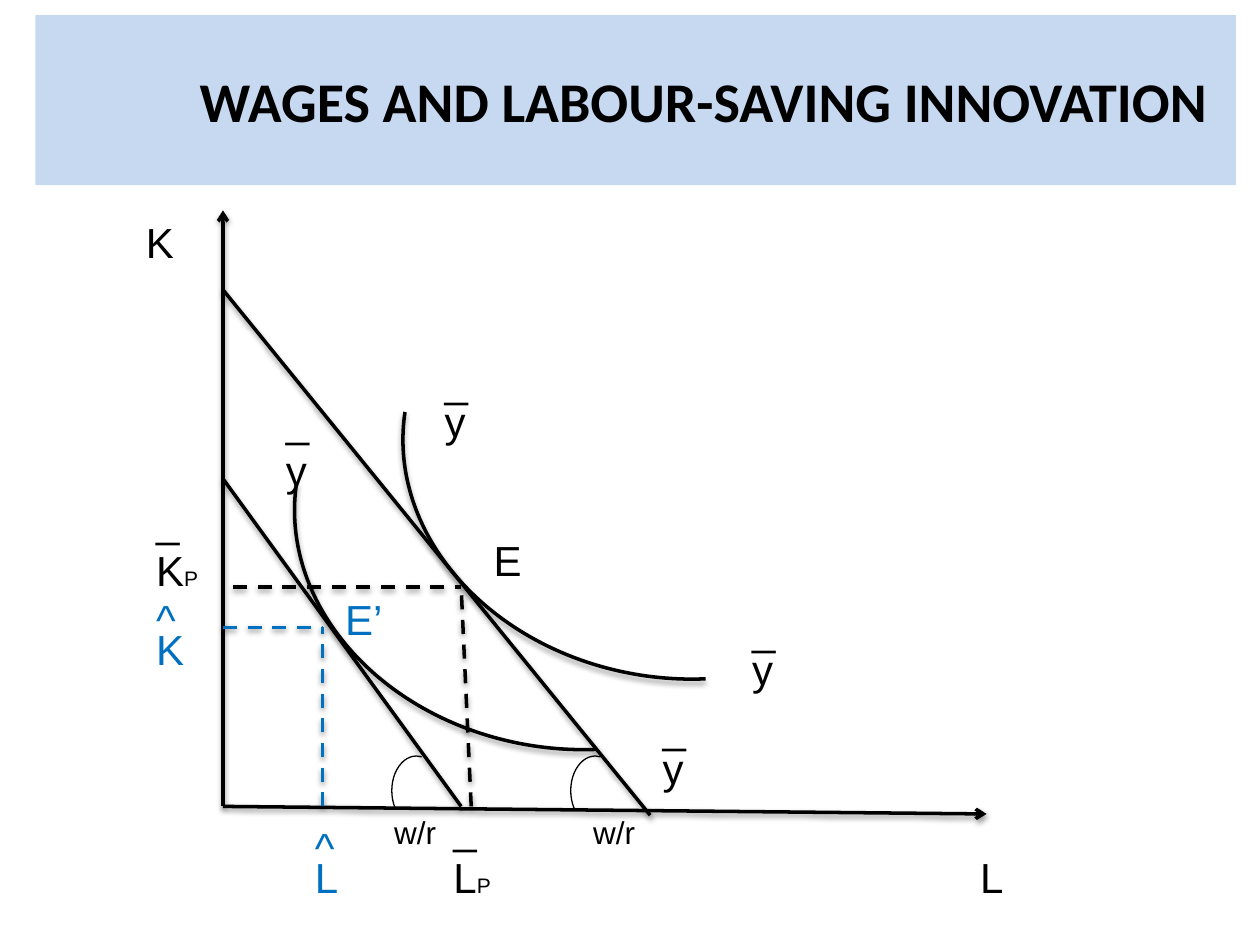
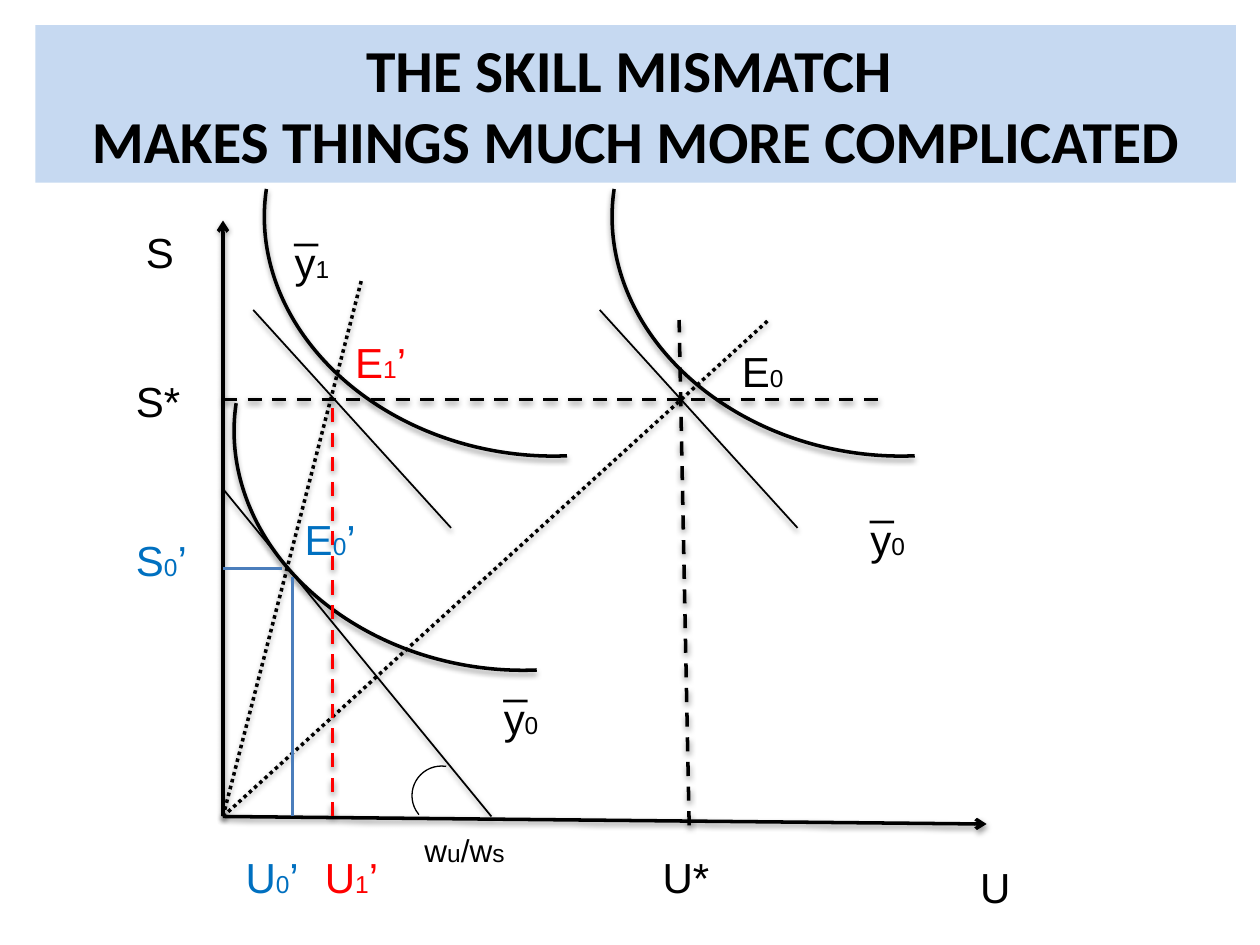
from lxml.etree import SubElement
from pptx import Presentation
from pptx.dml.color import RGBColor
from pptx.enum.dml import MSO_LINE
from pptx.enum.shapes import MSO_CONNECTOR, MSO_SHAPE
from pptx.enum.text import MSO_ANCHOR, MSO_AUTO_SIZE, PP_ALIGN
from pptx.oxml.ns import qn
from pptx.util import Inches, Pt

BLACK = RGBColor(0x00, 0x00, 0x00)
BLUE = RGBColor(0x00, 0x70, 0xC0)
STEEL = RGBColor(0x4B, 0x7E, 0xBC)
RED = RGBColor(0xFF, 0x00, 0x00)
BAND = RGBColor(0xC6, 0xD9, 0xF1)

DASH, DOT = MSO_LINE.DASH, MSO_LINE.ROUND_DOT
AXIS_X, AXIS_END = 1.77, 7.83
BAR, HAT = "_", "^"


def write_run(paragraph, text, size=24, color=BLACK, font="Arial", bold=False):
    run = paragraph.add_run()
    run.text = text
    run.font.size = Pt(size)
    run.font.name = font
    run.font.bold = bold
    run.font.color.rgb = color


def set_effects(shape, shadow):
    """Give the shape a soft drop shadow, or none at all."""
    effects = SubElement(shape._element.spPr, qn("a:effectLst"))
    if shadow:
        outer = SubElement(effects, qn("a:outerShdw"), blurRad="40000",
                           dist="20000", dir="5400000", rotWithShape="0")
        black = SubElement(outer, qn("a:srgbClr"), val=str(BLACK))
        SubElement(black, qn("a:alpha"), val="38000")


class Diagram:
    """Style and current slide of the production diagrams."""

    def __init__(self, deck):
        self.deck = deck
        self.slide = None

    def new_slide(self, lines, top, height, size, indent=0.1):
        self.slide = self.deck.slides.add_slide(self.deck.slide_layouts[5])
        title = self.slide.shapes.title
        title.left, title.top = Inches(0.28), Inches(top)
        title.width, title.height = Inches(9.53), Inches(height)
        title.fill.solid()
        title.fill.fore_color.rgb = BAND
        frame = title.text_frame
        frame.auto_size = MSO_AUTO_SIZE.NONE
        frame.vertical_anchor = MSO_ANCHOR.MIDDLE
        frame.margin_left = Inches(indent)
        paragraph = frame.paragraphs[0]
        paragraph.alignment = PP_ALIGN.CENTER
        for number, line in enumerate(lines):
            if number:
                paragraph.add_line_break()
            write_run(paragraph, line, size=size, font="Calibri", bold=True)

    def label(self, text, left, top, width=0.55, small=14, size=24, color=BLACK):
        """Write a label; every second part between | signs is small."""
        height = 0.5 if size == 24 else 0.4
        box = self.slide.shapes.add_textbox(
            Inches(left), Inches(top), Inches(width), Inches(height))
        frame = box.text_frame
        frame.word_wrap = True
        frame.auto_size = MSO_AUTO_SIZE.SHAPE_TO_FIT_TEXT
        for number, part in enumerate(text.split("|")):
            write_run(frame.paragraphs[0], part, color=color,
                      size=small if number % 2 else size)

    def marked(self, text, left, top, mark=BAR, gap=0.32, **style):
        """Write a label with a bar or a hat above it."""
        self.label(text, left, top, **style)
        self.label(mark, left, top - gap, color=style.get("color", BLACK))

    def line(self, start, end, weight=2, color=BLACK, dash=None,
             arrow=False, shadow=True):
        line = self.slide.shapes.add_connector(
            MSO_CONNECTOR.STRAIGHT, *map(Inches, start + end))
        line.line.width = Pt(weight)
        line.line.color.rgb = color
        if dash:
            line.line.dash_style = dash
        if arrow:
            SubElement(line.line._get_or_add_ln(), qn("a:tailEnd"), type="arrow")
        set_effects(line, shadow)

    def arc(self, left, top, width, height, angles, weight, rotation=0,
            shadow=False):
        arc = self.slide.shapes.add_shape(
            MSO_SHAPE.ARC, *map(Inches, (left, top, width, height)))
        arc.adjustments[0], arc.adjustments[1] = angles
        arc.rotation = rotation
        arc.fill.background()
        arc.line.color.rgb = BLACK
        arc.line.width = Pt(weight)
        set_effects(arc, shadow)

    def isoquant(self, left, top):
        self.arc(left, top, 4.35, 3.57, (152.42, 0.06), 2,
                 rotation=188.5, shadow=True)

    def angle(self, left, top, width, height):
        self.arc(left, top, width, height, (83.97, 167.39), 0.75)

    def axes(self, base, vertical, horizontal):
        top = base - 4.73
        self.line((AXIS_X, base), (AXIS_X, top), arrow=True)
        self.line((AXIS_X, base), (AXIS_END, base + 0.06), arrow=True)
        self.label(vertical, 1.06, top)
        self.label(horizontal, 7.68, base + 0.31)


def labour_saving(diagram):
    diagram.new_slide(["WAGES AND LABOUR-SAVING INNOVATION"],
                      top=0.12, height=1.35, size=32, indent=1.18)
    base = 6.4
    diagram.axes(base, "K", "L")

    # Isocosts and isoquants
    diagram.line((AXIS_X, 3.8), (3.66, base))
    diagram.line((AXIS_X, 2.3), (5.16, 6.47))
    diagram.isoquant(2.33, 2.37)
    diagram.isoquant(3.19, 1.81)
    diagram.marked("y", 2.17, 3.48, gap=0.39)
    for left, top in ((3.43, 3.09), (5.87, 5.06), (5.16, 5.84)):
        diagram.marked("y", left, top)

    # New equilibrium
    diagram.label("E’", 2.64, 4.66, color=BLUE)
    diagram.line((AXIS_X, 4.98), (2.56, 4.98), color=BLUE, dash=DASH)
    diagram.line((2.56, base), (2.56, 4.98), color=BLUE, dash=DASH)
    diagram.marked("L", 2.4, 6.71, mark=HAT, gap=0.24, color=BLUE)
    diagram.marked("K", 1.14, 4.9, mark=HAT, gap=0.24, color=BLUE)

    # Initial equilibrium
    diagram.label("E", 3.82, 4.19)
    diagram.line((1.85, 4.66), (3.66, 4.66), dash=DASH)
    diagram.line((3.74, base), (3.66, 4.66), dash=DASH)
    diagram.marked("L|P", 3.5, 6.71, gap=0.39, small=12)
    diagram.marked("K|P", 1.14, 4.27, gap=0.39, small=12)

    # Relative wage angles
    for angle_left, ratio_left in ((3.11, 3.03), (4.53, 4.61)):
        diagram.angle(angle_left, 6, 0.39, 0.55)
        diagram.label("w/r", ratio_left, 6.4, size=18)


def skill_mismatch(diagram):
    diagram.new_slide(["THE SKILL MISMATCH ", "MAKES THINGS MUCH MORE COMPLICATED"],
                      top=0.2, height=1.25, size=34)
    base = 6.48
    origin = (AXIS_X, base)
    diagram.axes(base, "S", "U")

    # Isoquants
    for left, top in ((1.85, 1.74), (2.09, 0.04), (4.85, 0.04)):
        diagram.isoquant(left, top)
    for text, left, top in (("y|1", 2.24, 1.83), ("y|0", 6.81, 4.03),
                            ("y|0", 3.9, 5.45)):
        diagram.marked(text, left, top, width=0.94)

    # Isocosts and expansion paths
    for left in (2.01, 4.76):
        diagram.line((left, 2.46), (left + 1.57, 4.19), weight=1)
    diagram.line((AXIS_X, 3.88), (3.9, base), weight=1)
    diagram.line(origin, (2.87, 2.22), dash=DOT)
    diagram.line(origin, (6.1, 2.54), dash=DOT)

    # Factor endowments
    diagram.line((AXIS_X, 3.17), (6.97, 3.17), dash=DASH)
    diagram.line((5.47, 6.55), (5.39, 2.54), dash=DASH)
    diagram.line((2.64, base), (2.64, 3.17), color=RED, dash=DASH)
    diagram.line((AXIS_X, 4.51), (2.24, 4.51), 1.5, STEEL, shadow=False)
    diagram.line((2.32, base), (2.32, 4.58), 1.5, STEEL, shadow=False)

    # Equilibria and axis values
    for text, left, top, color in (
            ("E|0", 5.79, 2.69, BLACK), ("S*", 0.98, 2.93, BLACK),
            ("U*", 5.16, 6.71, BLACK), ("E|1|’", 2.72, 2.62, RED),
            ("U|1|’", 2.48, 6.71, RED), ("E|0|’", 2.32, 4.03, BLUE),
            ("S|0|’", 0.98, 4.19, BLUE), ("U|0|’", 1.85, 6.71, BLUE)):
        diagram.label(text, left, top, width=0.71, color=color)

    # Relative wage angle
    diagram.angle(3.27, 6.08, 0.47, 0.47)
    diagram.label("w|u|/w|s", 3.27, 6.55, width=0.94, size=18)


def main():
    deck = Presentation()
    deck.slide_width, deck.slide_height = Inches(10), Inches(7.5)
    diagram = Diagram(deck)
    labour_saving(diagram)
    skill_mismatch(diagram)
    deck.save("out.pptx")


if __name__ == "__main__":
    main()
